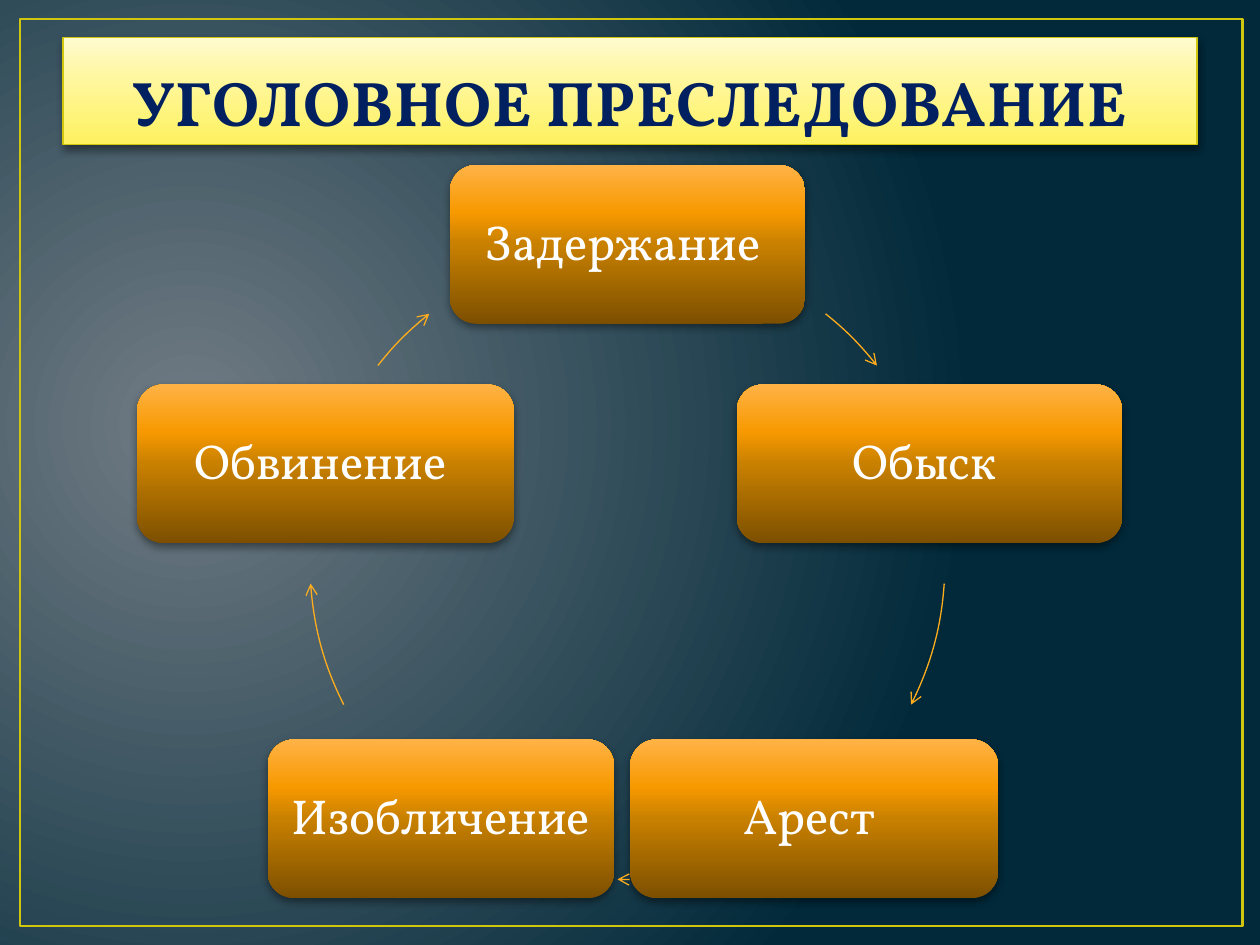
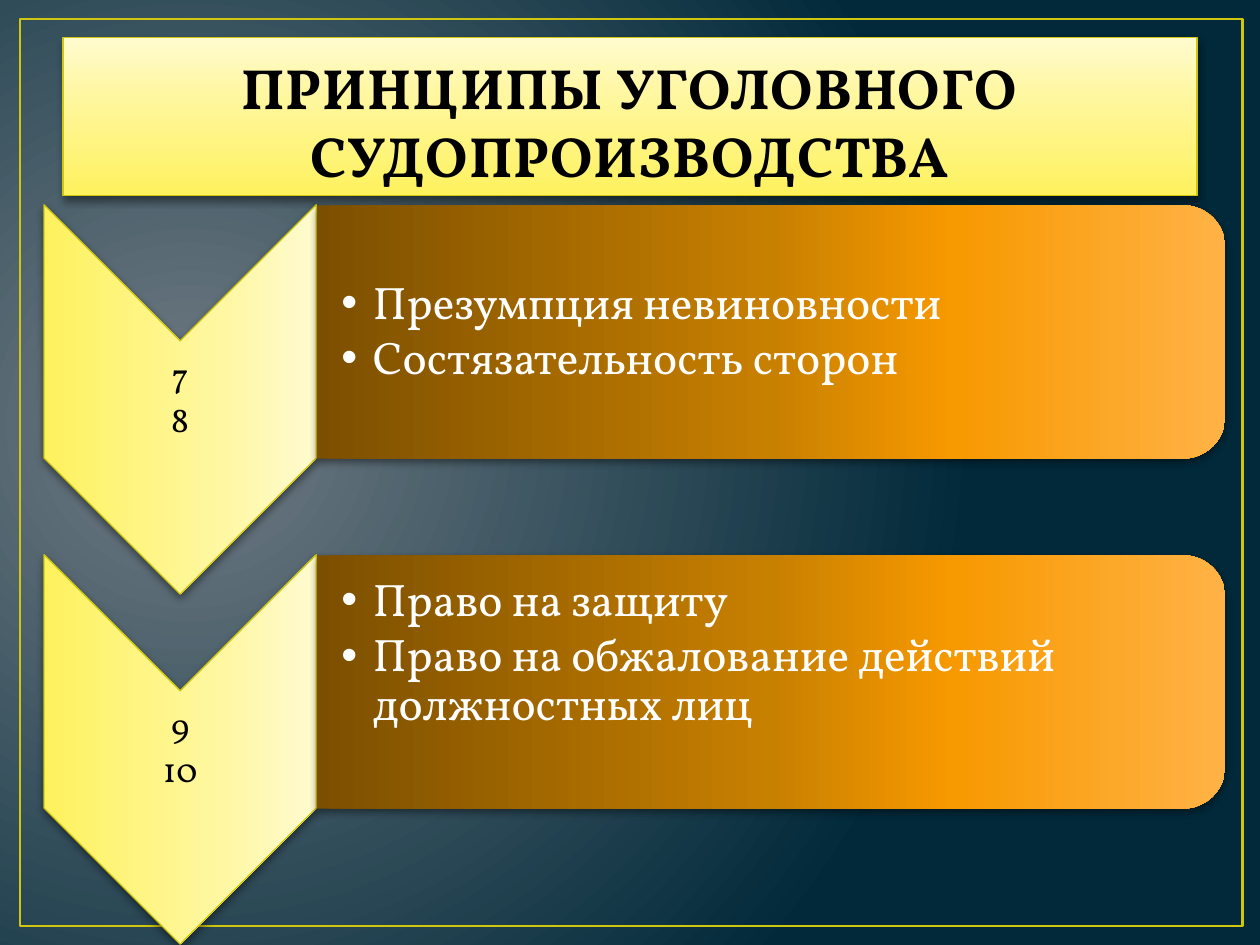
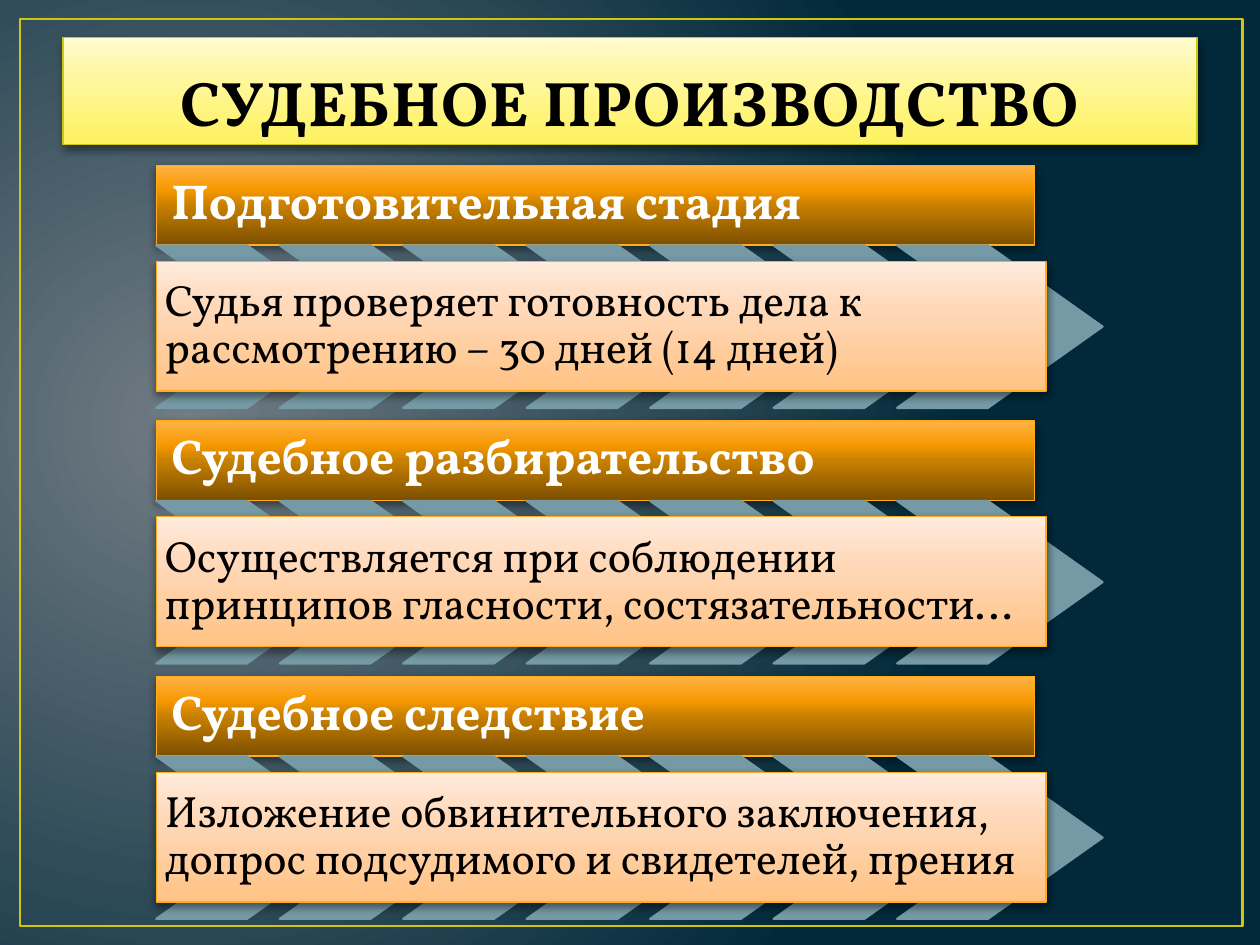
import math
from dataclasses import dataclass

from lxml import etree
from pptx import Presentation
from pptx.dml.color import RGBColor
from pptx.enum import shapes, text
from pptx.oxml.ns import qn
from pptx.util import Pt

SHAPE = shapes.MSO_SHAPE
ANCHOR = text.MSO_ANCHOR
ALIGN = text.PP_ALIGN


@dataclass(frozen=True)
class Theme:
    font: str = "Vollkorn"
    backdrop: tuple = ((0, "717C84"), (100, "01293A"))
    yellow: tuple = ((0, "FEF25E"), (65, "FFF7A2"), (100, "FFFBCF"))
    orange: tuple = ((0, "7C4F00"), (50, "C88000"), (70, "F79900"), (100, "FFB246"))
    peach: tuple = ((0, "FFC283"), (65, "FFD9BA"), (100, "FFEBDC"))
    gold: str = "CFC60D"
    amber: str = "FFAD1C"
    steel: str = "759AA5"
    navy: str = "002060"
    black: str = "000000"
    white: str = "FFFFFF"
    title: float = 36
    long_title: float = 32.4
    label: float = 28
    bullet: float = 26
    body: float = 25
    number: float = 20
    leading: float = 0.9
    after: float = 3.5


THEME = Theme()


def add_xml(parent, tag, **attributes):
    return etree.SubElement(parent, qn(tag), {key: str(value) for key, value in attributes.items()})


def set_gradient(fill, holder, stops):
    fill.gradient()
    gradient = next(holder.iter(qn("a:gradFill")))
    for child in list(gradient):
        gradient.remove(child)
    gradient.set("rotWithShape", "1")
    stop_list = add_xml(gradient, "a:gsLst")
    for position, color in stops:
        stop = add_xml(stop_list, "a:gs", pos=position * 1000)
        add_xml(stop, "a:srgbClr", val=color)
    return gradient


def add_shadow(shape):
    effects = shape.element.spPr.find(qn("a:effectLst"))
    shadow = add_xml(effects, "a:outerShdw", blurRad=Pt(5), dist=Pt(2), dir=90 * 60000,
                     algn="ctr", rotWithShape=0)
    color = add_xml(shadow, "a:srgbClr", val=THEME.black)
    add_xml(color, "a:alpha", val=43000)


def draw(page, kind, box, fill=None, line=None, weight=0.75, turned=False):
    left, top, width, height = box
    if turned:
        left, top = left + (width - height) / 2, top + (height - width) / 2
        width, height = height, width
    shape = page.shapes.add_shape(kind, Pt(left), Pt(top), Pt(width), Pt(height))
    shape.rotation = 90 if turned else 0
    shape.shadow.inherit = False
    if fill is None:
        shape.fill.background()
    elif isinstance(fill, str):
        shape.fill.solid()
        shape.fill.fore_color.rgb = RGBColor.from_string(fill)
    else:
        gradient = set_gradient(shape.fill, shape.element.spPr, fill)
        add_xml(gradient, "a:lin", ang=270 * 60000, scaled=0)
        add_shadow(shape)
    if line:
        shape.line.color.rgb = RGBColor.from_string(line)
        shape.line.width = Pt(weight)
    else:
        shape.line.fill.background()
    return shape


def add_text_box(page, box):
    return page.shapes.add_textbox(*(Pt(length) for length in box))


def write(shape, lines, size, color, align=ALIGN.LEFT, anchor=ANCHOR.MIDDLE,
          insets=(7.2, 3.6, 7.2, 3.6), bold=False, leading=THEME.leading, after=THEME.after):
    frame = shape.text_frame
    frame.word_wrap = True
    frame.vertical_anchor = anchor
    frame.margin_left, frame.margin_top, frame.margin_right, frame.margin_bottom = map(Pt, insets)
    for index, line in enumerate(lines):
        para = frame.paragraphs[0] if index == 0 else frame.add_paragraph()
        para.alignment = align
        para.line_spacing = leading
        para.space_after = Pt(after)
        span = para.add_run()
        span.text = line
        span.font.name = THEME.font
        span.font.size = Pt(size)
        span.font.bold = bold
        span.font.color.rgb = RGBColor.from_string(color)
    return frame


def add_page(deck, heading, color=THEME.black, size=THEME.title, height=61.2):
    page = deck.slides.add_slide(deck.slide_layouts[6])
    draw(page, SHAPE.RECTANGLE, (11.5, 10.8, 698.4, 518.4), line=THEME.gold, weight=1.5)
    banner = draw(page, SHAPE.RECTANGLE, (36, 21.6, 648, height), THEME.yellow, THEME.gold)
    frame = write(banner, [heading], size, color, ALIGN.CENTER, ANCHOR.BOTTOM,
                  bold=True, leading=1.0, after=0)
    frame.paragraphs[0].runs[0].font._element.set("spc", "50")
    return page


def add_cycle_arrow(page, box, start, end):
    arrow = draw(page, SHAPE.ARC, box, line=THEME.amber)
    arrow.adjustments[0] = start * 0.6
    arrow.adjustments[1] = end * 0.6
    add_xml(arrow.line._get_or_add_ln(), "a:tailEnd", type="arrow")


def add_cycle(page, box, steps):
    left, top, diameter, _ = box
    radius = diameter / 2
    height = 90.7
    for index, (label, width, start, end) in enumerate(steps):
        angle = math.radians(360 / len(steps) * index - 90)
        center_x = left + radius + radius * math.cos(angle)
        center_y = top + radius + radius * math.sin(angle)
        step = draw(page, SHAPE.ROUNDED_RECTANGLE,
                    (center_x - width / 2, center_y - height / 2, width, height), THEME.orange)
        write(step, [label], THEME.label, THEME.white, ALIGN.CENTER, insets=(8.64,) * 4)
        add_cycle_arrow(page, box, start, end)


def add_principles(page, box, numbers, principles, spare=0):
    left, top, width, height = box
    marker = 155.5
    draw(page, SHAPE.CHEVRON, (left, top, marker, height), THEME.yellow, THEME.gold, turned=True)
    number_box = add_text_box(page, (left, top + marker / 2, marker, height - marker))
    write(number_box, numbers, THEME.number, THEME.black, ALIGN.CENTER, insets=(0.9,) * 4)
    bar_left, bar_width = left + marker + 0.5, width - marker - 0.5
    draw(page, SHAPE.ROUND_2_SAME_RECTANGLE, (bar_left, top + 0.3, bar_width, 144.7),
         THEME.orange, turned=True)
    bullet_box = add_text_box(page, (bar_left - 0.5, top + 7.6, bar_width - 7, 130.3))
    frame = write(bullet_box, principles, THEME.bullet, THEME.white,
                  insets=(14.4, 1.2, 1.2, 1.2 + spare))
    for para in frame.paragraphs:
        properties = para._p.get_or_add_pPr()
        properties.set("marL", str(Pt(18)))
        properties.set("indent", str(Pt(-18)))
        add_xml(properties, "a:buFont", typeface="Arial")
        add_xml(properties, "a:buChar", char="•")


def add_stage(page, box, heading, detail):
    left, top, width, _ = box
    header = draw(page, SHAPE.RECTANGLE, (left, top, width - 6.5, 45.5), THEME.orange, THEME.amber)
    write(header, [heading], THEME.label, THEME.white, anchor=ANCHOR.BOTTOM,
          insets=(8.64,) * 4, bold=True)
    for index in range(7):
        chevron = draw(page, SHAPE.CHEVRON, (left + 70.56 * index, top + 45.7, 117.4, 92.9),
                       THEME.steel, THEME.steel, 1.25)
        chevron.adjustments[0] = 0.706
    panel = draw(page, SHAPE.RECTANGLE, (left, top + 54.8, width, 74.2), THEME.peach, THEME.amber)
    write(panel, [detail], THEME.body, THEME.black, insets=(5,) * 4)


def build_prosecution(deck):
    page = add_page(deck, "УГОЛОВНОЕ ПРЕСЛЕДОВАНИЕ", THEME.navy)
    add_cycle(page, (177.1, 139.7, 362.9, 362.9), [
        ("Задержание ", 203, 308.6, 321.8),
        ("Обыск ", 220.3, 3.9, 26.7),
        ("Арест ", 210.2, 90, 91.8),
        ("Изобличение ", 198, 153.3, 176.1),
        ("Обвинение ", 215.3, 218.2, 231.4),
    ])


def build_principles(deck):
    page = add_page(deck, "ПРИНЦИПЫ УГОЛОВНОГО СУДОПРОИЗВОДСТВА", size=THEME.long_title, height=90)
    groups = [
        (["7", "8"], ["Презумпция невиновности", "Состязательность сторон"], 0),
        (["9", "10"], ["Право на защиту", "Право на обжалование действий должностных лиц"], 32),
    ]
    for index, group in enumerate(groups):
        add_principles(page, (25.2, 117 + 200 * index, 675, 222.5), *group)


def build_trial(deck):
    page = add_page(deck, "СУДЕБНОЕ ПРОИЗВОДСТВО")
    stages = [
        ("Подготовительная стадия",
         "Судья проверяет готовность дела к рассмотрению – 30 дней (14 дней)"),
        ("Судебное разбирательство",
         "Осуществляется при соблюдении принципов гласности, состязательности…"),
        ("Судебное следствие",
         "Изложение обвинительного заключения, допрос подсудимого и свидетелей, прения"),
    ]
    for index, stage in enumerate(stages):
        add_stage(page, (89.3, 94.5 + 146 * index, 508.5, 138.6), *stage)


def main():
    deck = Presentation()
    deck.slide_width, deck.slide_height = Pt(720), Pt(540)
    master = deck.slide_master
    gradient = set_gradient(master.background.fill, master.element, THEME.backdrop)
    circle = add_xml(gradient, "a:path", path="circle")
    add_xml(circle, "a:fillToRect", l=15000, t=50000, r=85000, b=60000)
    build_prosecution(deck)
    build_principles(deck)
    build_trial(deck)
    deck.save("out.pptx")


if __name__ == "__main__":
    main()
